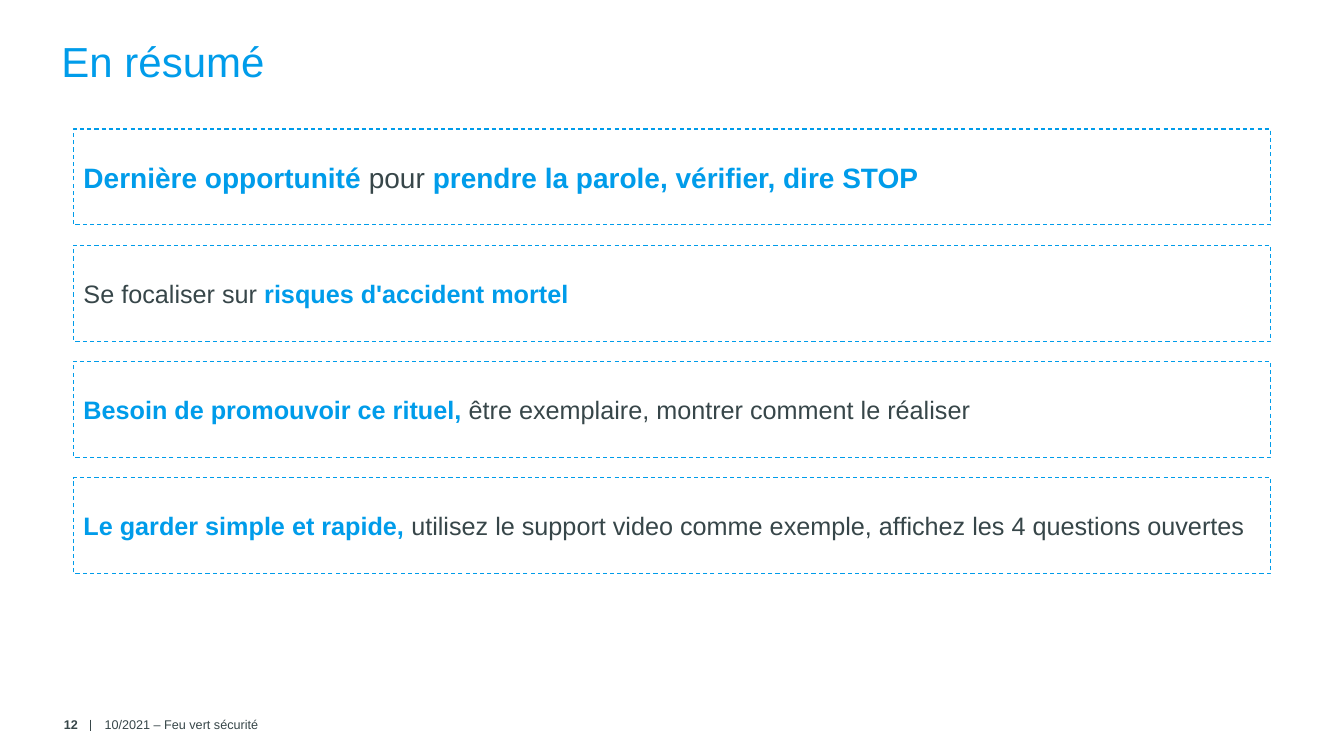
from lxml.etree import SubElement
from pptx import Presentation
from pptx.dml.color import RGBColor
from pptx.enum.dml import MSO_LINE
from pptx.enum.shapes import MSO_CONNECTOR, MSO_SHAPE
from pptx.enum.text import MSO_ANCHOR, MSO_AUTO_SIZE, PP_ALIGN
from pptx.oxml.ns import qn
from pptx.util import Inches, Pt

COLORS = {"accent": "009CEA", "ink": "374649", "paper": "FFFFFF"}
FONT = "Arial"
MESSAGES = [
    (20, [("Dernière opportunité ", True), ("pour ", False),
          ("prendre la parole, vérifier, dire STOP", True)]),
    (18, [("Se focaliser sur\u00a0", False), ("risques d'accident mortel", True)]),
    (18, [("Besoin de promouvoir ce rituel, ", True),
          ("être exemplaire, montrer comment le réaliser", False)]),
    (18, [("Le garder simple et rapide, ", True),
          ("utilisez le support video comme exemple, affichez les 4 questions ouvertes", False)]),
]


def rgb(name):
    """Return the named palette colour."""
    return RGBColor.from_string(COLORS[name])


def style(paragraph, size, color=None, bold=None, align=PP_ALIGN.LEFT):
    """Set the font and alignment shared by a whole paragraph."""
    paragraph.alignment = align
    paragraph.font.name = FONT
    paragraph.font.size = Pt(size)
    paragraph.font.bold = bold
    if color:
        paragraph.font.color.rgb = rgb(color)


def add_heading(slide, left, top, width, height):
    """Place the slide title in its box."""
    heading = slide.shapes.title
    heading.left, heading.top = Inches(left), Inches(top)
    heading.width, heading.height = Inches(width), Inches(height)
    frame = heading.text_frame
    frame.text = "En résumé"
    frame.auto_size = MSO_AUTO_SIZE.NONE
    frame.vertical_anchor = MSO_ANCHOR.TOP
    frame.margin_top = Inches(0.08)
    style(frame.paragraphs[0], 30, "accent")


def add_message(slide, message, left, top, width, height):
    """Draw one dashed panel with its highlighted sentence."""
    size, parts = message
    panel = slide.shapes.add_shape(
        MSO_SHAPE.RECTANGLE, Inches(left), Inches(top), Inches(width), Inches(height))
    panel.shadow.inherit = False
    panel.fill.solid()
    panel.fill.fore_color.rgb = rgb("paper")
    panel.line.color.rgb = rgb("accent")
    panel.line.width = Pt(0.75)
    panel.line.dash_style = MSO_LINE.DASH
    panel.text_frame.word_wrap = True
    panel.text_frame.vertical_anchor = MSO_ANCHOR.MIDDLE
    sentence = panel.text_frame.paragraphs[0]
    style(sentence, size)
    for words, highlighted in parts:
        run = sentence.add_run()
        run.text = words
        run.font.bold = highlighted
        run.font.color.rgb = rgb("accent" if highlighted else "ink")


def add_messages(slide, left, top, width, height, gap=0.2):
    """Stack the messages in equal rows separated by a gap."""
    row = (height + gap) / len(MESSAGES)
    for index, message in enumerate(MESSAGES):
        add_message(slide, message, left, top + index * row, width, row - gap)


def add_footer(slide, left, top, width, height):
    """Place page number, divider and deck name along one line."""
    number_width, name_offset = 0.63, 0.7
    entries = [
        ("12", left, number_width, True, PP_ALIGN.RIGHT),
        ("10/2021 – Feu vert sécurité", left + name_offset, width - name_offset,
         None, PP_ALIGN.LEFT),
    ]
    for words, x, entry_width, bold, align in entries:
        entry = slide.shapes.add_textbox(
            Inches(x), Inches(top), Inches(entry_width), Inches(height))
        frame = entry.text_frame
        frame.word_wrap = True
        frame.vertical_anchor = MSO_ANCHOR.MIDDLE
        frame.text = words
        style(frame.paragraphs[0], 9, "ink", bold, align)
    divider_x = Inches(left + 0.66)
    divider = slide.shapes.add_connector(
        MSO_CONNECTOR.STRAIGHT, divider_x, Inches(top + 0.09),
        divider_x, Inches(top + 0.2))
    divider.line.color.rgb = rgb("ink")
    divider.line.width = Pt(1)
    SubElement(divider.line._get_or_add_ln().getparent(), qn("a:effectLst"))


def main():
    """Build the summary slide and save it."""
    deck = Presentation()
    deck.slide_width, deck.slide_height = Inches(13.33), Inches(7.5)
    slide = deck.slides.add_slide(deck.slide_layouts.get_by_name("Title Only"))
    add_heading(slide, 0.51, 0.27, 10.63, 1.1)
    add_messages(slide, 0.73, 1.28, 11.87, 4.41)
    add_footer(slide, 0.24, 7.05, 4.64, 0.28)
    deck.save("out.pptx")


if __name__ == "__main__":
    main()
